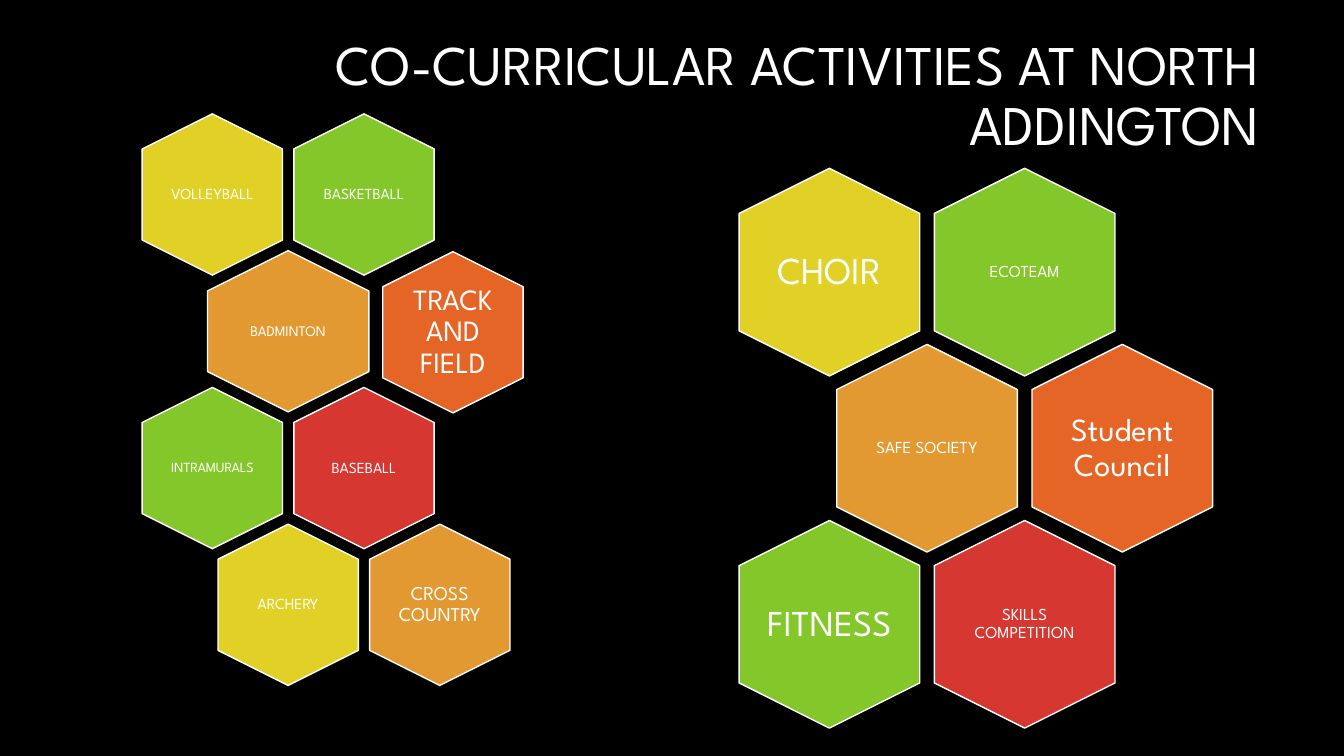
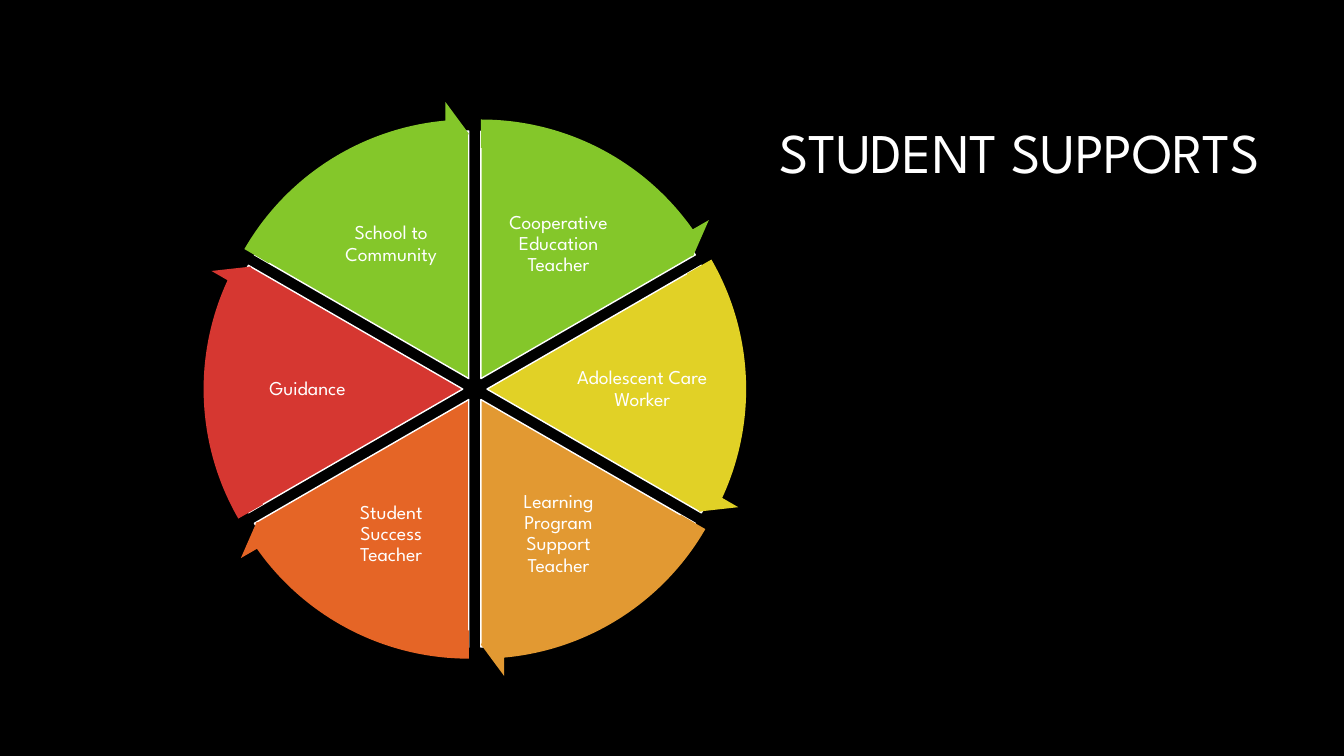
"""Build two slides: co-curricular activities and student supports."""
from dataclasses import dataclass
from math import cos, radians, sin

from pptx import Presentation
from pptx.dml.color import RGBColor
from pptx.enum import shapes, text
from pptx.util import Inches, Pt

FONT = "League Spartan"
COLORS = {
    "black": "000000",
    "white": "FFFFFF",
    "green": "84C72A",
    "yellow": "E1D126",
    "amber": "E29932",
    "orange": "E56526",
    "red": "D63731",
}
ADJ_PER_DEGREE = 0.6


@dataclass
class Cell:
    """One hexagon: its label, colour, text size and any departure from the grid."""
    label: str
    color: str
    size: float
    shift_x: float = 0
    shift_y: float = 0
    width: float = 0


SPORTS = [
    [Cell("VOLLEYBALL", "yellow", 11), Cell("BASKETBALL", "green", 11)],
    [Cell("BADMINTON", "amber", 10.5, width=1.6),
     Cell("TRACK AND FIELD", "orange", 21, shift_x=0.13, shift_y=0.01)],
    [Cell("INTRAMURALS", "green", 10), Cell("BASEBALL", "red", 11)],
    [Cell("ARCHERY", "yellow", 11), Cell("CROSS COUNTRY", "amber", 14)],
]
CLUBS = [
    [Cell("CHOIR", "yellow", 27), Cell("ECOTEAM", "green", 12)],
    [Cell("SAFE SOCIETY", "amber", 12), Cell("Student Council", "orange", 23)],
    [Cell("FITNESS", "green", 26), Cell("SKILLS COMPETITION", "red", 12)],
]
SUPPORTS = [
    ("Cooperative Education Teacher", "green"),
    ("Adolescent Care Worker", "yellow"),
    ("Learning Program Support Teacher", "amber"),
    ("Student Success Teacher", "orange"),
    ("Guidance", "red"),
    ("School to Community", "green"),
]


def rgb(name):
    """Return the named colour."""
    return RGBColor.from_string(COLORS[name])


def centered(cx, cy, w, h):
    """Return left, top, width and height of a box around a centre in inches."""
    return Inches(cx - w / 2), Inches(cy - h / 2), Inches(w), Inches(h)


def add_text(parent, box, content, size, align=text.PP_ALIGN.CENTER, inset=(0, 0)):
    """Add a wrapped, vertically centred white text box."""
    tf = parent.add_textbox(*box).text_frame
    tf.word_wrap = True
    tf.vertical_anchor = text.MSO_ANCHOR.MIDDLE
    tf.margin_left = tf.margin_right = Inches(inset[0])
    tf.margin_top = tf.margin_bottom = Inches(inset[1])
    p = tf.paragraphs[0]
    p.text = content
    p.alignment = align
    p.line_spacing = 0.9
    font = p.runs[0].font
    font.name, font.size = FONT, Pt(size)
    font.color.rgb = rgb("white")


def add_preset(parent, kind, box, color, adjustments, outlined=True):
    """Add a flat preset shape, with a thin white outline if wanted."""
    sp = parent.add_shape(kind, *box)
    sp.shadow.inherit = False
    sp.fill.solid()
    sp.fill.fore_color.rgb = rgb(color)
    if outlined:
        sp.line.color.rgb = rgb("white")
        sp.line.width = Pt(1)
    else:
        sp.line.fill.background()
    for i, value in enumerate(adjustments):
        sp.adjustments[i] = value
    return sp


def add_title(s, top, content):
    """Add the right-aligned slide title."""
    box = Inches(3.17), Inches(top), Inches(9.42), Inches(1.41)
    add_text(s.shapes, box, content, 40, text.PP_ALIGN.RIGHT, (0.1, 0.05))


def add_honeycomb(s, left, top, height, rows):
    """Add staggered rows of upright hexagons of the given height."""
    parent = s.shapes.add_group_shape().shapes
    width, pitch_x, pitch_y = 0.87 * height, 0.94 * height, 0.848 * height
    for row, cells in enumerate(rows):
        for col, cell in enumerate(cells):
            cx = left + width / 2 + (col + row % 2 / 2) * pitch_x + cell.shift_x
            cy = top + height / 2 + row * pitch_y + cell.shift_y
            box = centered(cx, cy, height, cell.width or width)
            sp = add_preset(parent, shapes.MSO_SHAPE.HEXAGON, box, cell.color, [0.25])
            sp.rotation = 90
            box = centered(cx, cy, 0.6 * height, 0.69 * height)
            add_text(parent, box, cell.label, cell.size)


def add_wheel(s, cx, cy, diameter, items):
    """Add a wheel of pushed-out slices, each rimmed by a clockwise arrow."""
    parent = s.shapes.add_group_shape().shapes
    step = 360 / len(items)
    arrows = []
    for i, (label, color) in enumerate(items):
        start, end = (270 + i * step) % 360, (270 + (i + 1) * step) % 360
        middle = radians(start + step / 2)
        dx, dy = cos(middle), sin(middle)
        x, y = cx + 0.12 * dx, cy + 0.12 * dy
        first, last = start * ADJ_PER_DEGREE, end * ADJ_PER_DEGREE
        add_preset(parent, shapes.MSO_SHAPE.PIE, centered(x, y, diameter, diameter),
                   color, [first, last])
        label_width = 1.34 if abs(dy) < 0.1 else 1.28
        box = centered(cx + 1.66 * dx, cy + 1.66 * dy, label_width, 0.99)
        add_text(parent, box, label, 14, inset=(0.02, 0.02))
        arrows.append((x, y, color, first, last))
    for x, y, color, first, last in arrows:
        box = centered(x, y, diameter + 0.6, diameter + 0.6)
        tip = (last - 3.28) % (360 * ADJ_PER_DEGREE)
        add_preset(parent, shapes.MSO_SHAPE.CIRCULAR_ARROW, box, color,
                   [0.051, 3.28, tip, first, 0.059], outlined=False)


def add_slide(prs):
    """Add a blank slide on the shared black background."""
    s = prs.slides.add_slide(prs.slide_layouts[6])
    s.background.fill.solid()
    s.background.fill.fore_color.rgb = rgb("black")
    return s


def build_activities(prs):
    """Build the activities slide with its two honeycombs."""
    s = add_slide(prs)
    add_title(s, 0.26, "CO-CURRICULAR ACTIVITIES AT NORTH ADDINGTON")
    add_honeycomb(s, 1.41, 1.13, 1.6, SPORTS)
    add_honeycomb(s, 7.33, 1.67, 2.06, CLUBS)


def build_supports(prs):
    """Build the student supports slide with its wheel."""
    s = add_slide(prs)
    add_wheel(s, 4.71, 3.86, 4.91, SUPPORTS)
    add_title(s, 0.84, "STUDENT SUPPORTS")


def main():
    """Build and save the presentation."""
    prs = Presentation()
    prs.slide_width, prs.slide_height = Inches(13.33), Inches(7.5)
    build_activities(prs)
    build_supports(prs)
    prs.save("out.pptx")


if __name__ == "__main__":
    main()
